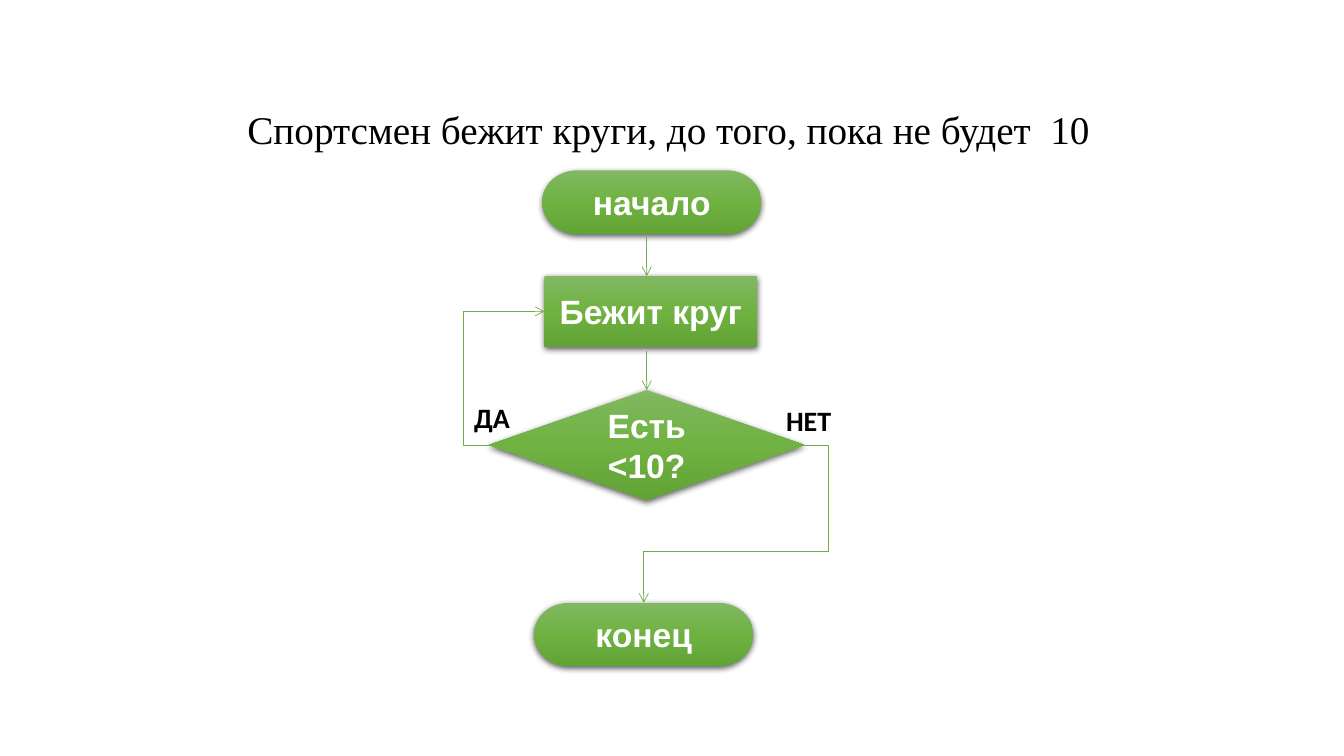
from pptx import Presentation, util as u
from pptx.dml.color import RGBColor
from pptx.enum import shapes, text
from pptx.oxml import parse_xml
from pptx.oxml.ns import nsdecls

# Content: places are left, top, width, height in percent of the slide
TITLE = ("Спортсмен бежит круги, до того, пока не будет  10",
         (7.35, 10.13, 84.77, 9.6))
STEPS = {
    "start": ("начало", "FLOWCHART_TERMINATOR", (40.36, 22.53, 16.28, 8.4)),
    "run": ("Бежит круг", "FLOWCHART_PROCESS", (40.51, 36.53, 15.83, 9.33)),
    "test": ("Есть <10?", "FLOWCHART_DECISION", (36.38, 51.6, 23.48, 14.53)),
    "end": ("конец", "FLOWCHART_TERMINATOR", (39.76, 79.73, 16.28, 8.4)),
}
LABELS = [("ДА", (34.28, 52.27, 4.65, 5.87)),
          ("НЕТ", (56.94, 52.67, 6.45, 5.87))]
GAP = 5.2                # length of the straight arrows
LOOP = 34.5              # left edge of the loop back
EXIT = (61.67, 72.93)    # outer corner of the way out


class Theme:
    title = ("Times New Roman", 28, "000000", False)
    step = ("Arial", 24, "FFFFFF", True)
    label = ("Calibri", 20, "000000", True)
    line, weight = "70AD47", 0.5
    grad = [(0, "81B861"), (50, "6FB242"), (100, "62A336")]


deck = Presentation()
deck.slide_width, deck.slide_height = u.Inches(13.33), u.Inches(7.5)
slide = deck.slides.add_slide(deck.slide_layouts[6])


def scale(*nums):
    sides = (deck.slide_width, deck.slide_height)
    return [round(n * sides[i % 2] / 100) for i, n in enumerate(nums)]


def add_xml(parent, xml):
    head, tail = xml.split(">", 1)
    bare = head.endswith("/")
    head = head.rstrip("/") + " " + nsdecls("a")
    parent.append(parse_xml(head + ("/>" if bare else ">") + tail))


def write(frame, words, style):
    frame.word_wrap = True
    para = frame.paragraphs[0]
    para.text, para.alignment = words, text.PP_ALIGN.CENTER
    font = para.font
    font.name, font.size, font.bold = style[0], u.Pt(style[1]), style[3]
    font.color.rgb = RGBColor.from_string(style[2])
    return para


def add_text(words, place, style):
    frame = slide.shapes.add_textbox(*scale(*place)).text_frame
    frame.auto_size = text.MSO_AUTO_SIZE.SHAPE_TO_FIT_TEXT
    return write(frame, words, style)


def add_step(words, kind, place):
    step = slide.shapes.add_shape(shapes.MSO_SHAPE[kind], *scale(*place))
    stops = "".join(f'<a:gs pos="{pos * 1000}"><a:srgbClr val="{tint}"/></a:gs>'
                    for pos, tint in Theme.grad)
    props = step.element.spPr
    add_xml(props, f'<a:gradFill rotWithShape="1"><a:gsLst>{stops}</a:gsLst>'
                   '<a:lin ang="5400000" scaled="0"/></a:gradFill>')
    step.line.fill.background()
    add_xml(props, '<a:effectLst><a:outerShdw blurRad="57150" dist="19050" '
                   'dir="5400000" algn="ctr" rotWithShape="0">'
                   '<a:srgbClr val="000000"><a:alpha val="63000"/></a:srgbClr>'
                   '</a:outerShdw></a:effectLst>')
    frame = step.text_frame
    frame.vertical_anchor = text.MSO_ANCHOR.MIDDLE
    if kind == "FLOWCHART_DECISION":
        frame.margin_left = frame.margin_right = u.Inches(0.08)
        frame.margin_top = frame.margin_bottom = u.Inches(0.04)
    write(frame, words, Theme.step)


def add_arrow(start, end, bends=()):
    kind = shapes.MSO_CONNECTOR.ELBOW if bends else shapes.MSO_CONNECTOR.STRAIGHT
    arrow = slide.shapes.add_connector(kind, *scale(*start, *end))
    arrow.line.color.rgb = RGBColor.from_string(Theme.line)
    arrow.line.width = u.Pt(Theme.weight)
    props = arrow.element.spPr
    add_xml(arrow.line._get_or_add_ln(), '<a:tailEnd type="arrow"/>')
    add_xml(props, "<a:effectLst/>")
    if bends:
        geom = props.prstGeom
        geom.set("prst", f"bentConnector{len(bends) + 2}")
        guides = geom.get_or_add_avLst()
        for i, bend in enumerate(bends):
            share = (bend - start[i]) / (end[i] - start[i])
            add_xml(guides, f'<a:gd name="adj{i + 1}" '
                            f'fmla="val {round(share * 100000)}"/>')


# Title and steps
add_text(*TITLE, Theme.title).line_spacing = 1.5
for step in STEPS.values():
    add_step(*step)

# Straight arrows on the axis of the decision
run, test, end = (STEPS[name][2] for name in ("run", "test", "end"))
axis, mid = test[0] + test[2] / 2, test[1] + test[3] / 2
for place in (run, test):
    add_arrow((axis, place[1] - GAP), (axis, place[1]))

# Loop back and way out
add_arrow((test[0], mid), (run[0], run[1] + run[3] / 2), (LOOP,))
add_arrow((test[0] + test[2], mid), (end[0] + end[2] / 2, end[1]), EXIT)

# Branch labels
for label in LABELS:
    add_text(*label, Theme.label)

deck.save("out.pptx")
